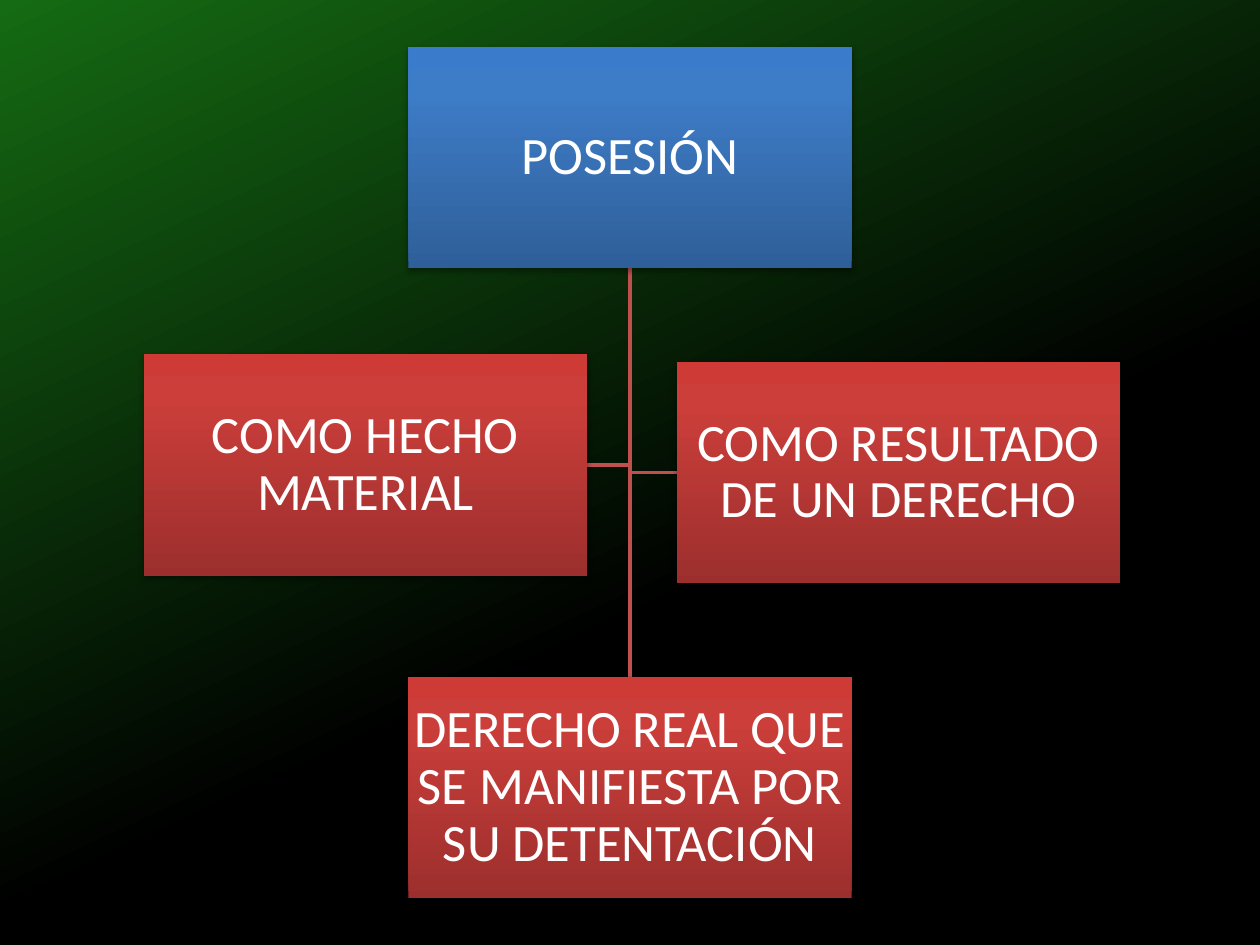
from copy import deepcopy

from lxml import etree
from pptx import Presentation
from pptx.dml.color import RGBColor
from pptx.enum.shapes import MSO_CONNECTOR, MSO_SHAPE
from pptx.enum.text import MSO_ANCHOR, PP_ALIGN
from pptx.oxml.ns import qn
from pptx.util import Inches, Pt

RECT, STRAIGHT = MSO_SHAPE.RECTANGLE, MSO_CONNECTOR.STRAIGHT
MIDDLE, CENTER = MSO_ANCHOR.MIDDLE, PP_ALIGN.CENTER

COLORS = {
    "black": "000000", "green": "156B13", "white": "FFFFFF", "line": "C0504D",
    "blue_dark": "2F5F99", "blue_mid": "3D7CC7", "blue_light": "3A7CCB",
    "red_dark": "9C2F2D", "red_mid": "CB3E3A", "red_light": "CE3B37",
}
BOX_W, BOX_H = 3.52, 1.76
CENTER_X = 5


def rgb(name):
    return RGBColor.from_string(COLORS[name])


def set_gradient(fill, element, stops, angle):
    fill.gradient()
    fill.gradient_angle = angle
    gs_lst = element.find(".//" + qn("a:gsLst"))
    while len(gs_lst) < len(stops):
        gs_lst.append(deepcopy(gs_lst[0]))
    for stop, (position, color) in zip(fill.gradient_stops, stops):
        stop.position = position
        stop.color.rgb = rgb(color)


def add_shadow(shape, alpha, distance):
    shape.shadow.inherit = False
    effects = shape._element.spPr.find(qn("a:effectLst"))
    shadow = etree.SubElement(effects, qn("a:outerShdw"), blurRad=str(Pt(3.1)),
                              dist=str(Pt(distance)), dir="5400000", rotWithShape="0")
    color = etree.SubElement(shadow, qn("a:srgbClr"), val=COLORS["black"])
    etree.SubElement(color, qn("a:alpha"), val=str(alpha * 1000))


def write_text(tf, text, size=30, color="white", font="Calibri"):
    tf.word_wrap = True
    tf.vertical_anchor = MIDDLE
    tf.margin_left = tf.margin_right = tf.margin_top = tf.margin_bottom = Inches(0.02)
    p = tf.paragraphs[0]
    p.alignment = CENTER
    p.line_spacing = 0.9
    r = p.add_run()
    r.text = text
    r.font.size = Pt(size)
    r.font.name = font
    r.font.color.rgb = rgb(color)


def add_box(s, x, y, text, hue="red", alpha=38, distance=1.6):
    sp = s.shapes.add_shape(RECT, Inches(x), Inches(y), Inches(BOX_W), Inches(BOX_H))
    stops = [(0, hue + "_dark"), (0.8, hue + "_mid"), (1, hue + "_light")]
    set_gradient(sp.fill, sp._element.spPr, stops, 90)
    sp.line.fill.background()
    add_shadow(sp, alpha, distance)
    write_text(sp.text_frame, text)


def style_line(line):
    line.color.rgb = rgb("line")
    line.width = Pt(2)


def add_elbow(s, top, x, y):
    builder = s.shapes.build_freeform(Inches(CENTER_X), Inches(top))
    builder.add_line_segments([(Inches(CENTER_X), Inches(y)), (Inches(x), Inches(y))], close=False)
    sp = builder.convert_to_shape()
    sp.fill.background()
    style_line(sp.line)
    sp.shadow.inherit = False


def add_trunk(s, top, bottom):
    cx = s.shapes.add_connector(STRAIGHT, Inches(CENTER_X), Inches(top),
                                Inches(CENTER_X), Inches(bottom))
    style_line(cx.line)
    etree.SubElement(cx._element.spPr, qn("a:effectLst"))


def add_hierarchy(s, left, top, width, height):
    middle_x = CENTER_X - BOX_W / 2
    right_x = left + width - BOX_W
    bottom_y = top + height - BOX_H
    left_y, right_y = 2.81, 2.87
    root_bottom = top + BOX_H
    add_elbow(s, root_bottom, right_x, right_y + BOX_H / 2)
    add_elbow(s, root_bottom, left + BOX_W, left_y + BOX_H / 2)
    add_trunk(s, root_bottom, bottom_y)
    add_box(s, middle_x, top, "POSESIÓN", hue="blue", alpha=35, distance=1.8)
    add_box(s, middle_x, bottom_y, "DERECHO REAL QUE SE MANIFIESTA POR SU DETENTACIÓN")
    add_box(s, left, left_y, "COMO HECHO MATERIAL")
    add_box(s, right_x, right_y, "COMO RESULTADO DE UN DERECHO")


def main():
    prs = Presentation()
    prs.slide_width, prs.slide_height = Inches(10), Inches(7.5)
    s = prs.slides.add_slide(prs.slide_layouts[6])
    set_gradient(s.background.fill, s._element, [(0.4, "black"), (1, "green")], 115)
    add_hierarchy(s, 1.14, 0.37, 7.75, 6.76)
    prs.save("out.pptx")


if __name__ == "__main__":
    main()
